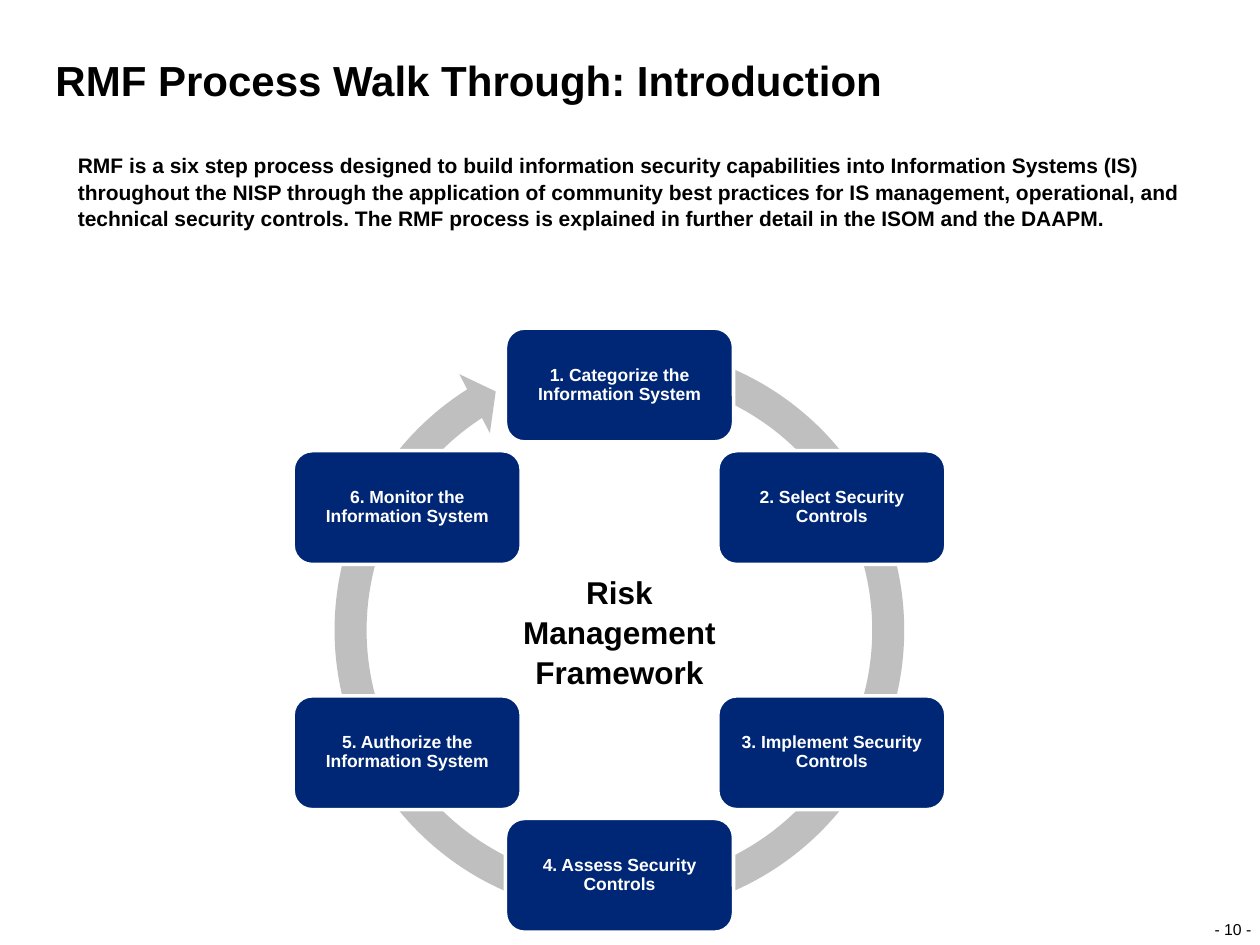
from math import cos, radians, sin

from pptx import Presentation
from pptx.dml.color import RGBColor
from pptx.enum.shapes import MSO_SHAPE
from pptx.enum.text import MSO_ANCHOR, PP_ALIGN
from pptx.util import Pt

COLORS = {"text": "000000", "step": "002776", "arrow": "BFBFBF", "white": "FFFFFF"}
STEPS = [
    "1. Categorize the Information System",
    "2. Select Security Controls",
    "3. Implement Security Controls",
    "4. Assess Security Controls",
    "5. Authorize the Information System",
    "6. Monitor the Information System",
]
ARROW_ADJUSTMENTS = [0.053, 3.126, 142.44, 171.177, 0.055]


def color(name):
    return RGBColor.from_string(COLORS[name])


def write(shape, text, size, bold=True, ink="text", align=PP_ALIGN.LEFT,
          anchor=MSO_ANCHOR.TOP, spacing=1.06, margins=(7.2, 3.6), wrap=True):
    frame = shape.text_frame
    frame.word_wrap = wrap
    frame.vertical_anchor = anchor
    frame.margin_left = frame.margin_right = Pt(margins[0])
    frame.margin_top = frame.margin_bottom = Pt(margins[1])
    paragraph = frame.paragraphs[0]
    paragraph.alignment = align
    paragraph.line_spacing = spacing
    paragraph.space_before = Pt(0)
    run = paragraph.add_run()
    run.text = text
    run.font.name = "Arial"
    run.font.size = Pt(size)
    run.font.bold = bold
    run.font.color.rgb = color(ink)


def add_text(slide, box, text, size, **style):
    shape = slide.shapes.add_textbox(*map(Pt, box))
    write(shape, text, size, **style)


def add_filled_shape(slide, kind, box, fill):
    shape = slide.shapes.add_shape(kind, *map(Pt, box))
    shape.shadow.inherit = False
    shape.fill.solid()
    shape.fill.fore_color.rgb = color(fill)
    shape.line.fill.background()
    return shape


def place_title(slide, box, text):
    title = slide.shapes.title
    title.left, title.top, title.width, title.height = map(Pt, box)
    write(title, text, 24, anchor=MSO_ANCHOR.BOTTOM, spacing=0.9, margins=(0, 0))


def add_step(slide, box, text):
    step = add_filled_shape(slide, MSO_SHAPE.ROUNDED_RECTANGLE, box, "step")
    step.line.color.rgb = color("white")
    step.line.width = Pt(2)
    write(step, text, 10, ink="white", align=PP_ALIGN.CENTER,
          anchor=MSO_ANCHOR.MIDDLE, spacing=0.9, margins=(3, 3))


def add_cycle(slide, box):
    left, top, width, height = box
    center_x, center_y = left + width / 2, top + height / 2
    step_width, step_height = 130.3, 65
    radius = (height - step_height) / 2
    arrow = add_filled_shape(slide, MSO_SHAPE.CIRCULAR_ARROW, box, "arrow")
    for index, value in enumerate(ARROW_ADJUSTMENTS):
        arrow.adjustments[index] = value
    for index, text in enumerate(STEPS):
        angle = radians(index * 360 / len(STEPS) - 90)
        step_left = center_x + radius * cos(angle) - step_width / 2
        step_top = center_y + radius * sin(angle) - step_height / 2
        add_step(slide, (step_left, step_top, step_width, step_height), text)
    label_width, label_height = 141, 75
    add_text(slide, (center_x - label_width / 2, center_y - label_height / 2,
                     label_width, label_height),
             "Risk Management Framework", 18, align=PP_ALIGN.CENTER)


def main():
    presentation = Presentation()
    presentation.slide_width, presentation.slide_height = Pt(720), Pt(540)
    slide = presentation.slides.add_slide(presentation.slide_layouts[5])
    place_title(slide, (31.7, 34.6, 592, 26), "RMF Process Walk Through: Introduction")
    add_text(slide, (37.4, 82.8, 649.5, 69),
             "RMF is a six step process designed to build information security "
             "capabilities into Information Systems (IS) throughout the NISP through "
             "the application of community best practices for IS management, "
             "operational, and technical security controls. The RMF process is "
             "explained in further detail in the ISOM and the DAAPM.", 12)
    add_cycle(slide, (181.4, 187.5, 345.2, 345.2))
    add_text(slide, (693.4, 525, 22.3, 11.5), "- 10 -", 9, bold=False,
             align=PP_ALIGN.CENTER, anchor=MSO_ANCHOR.BOTTOM,
             margins=(0, 0), wrap=False)
    presentation.save("out.pptx")


if __name__ == "__main__":
    main()
